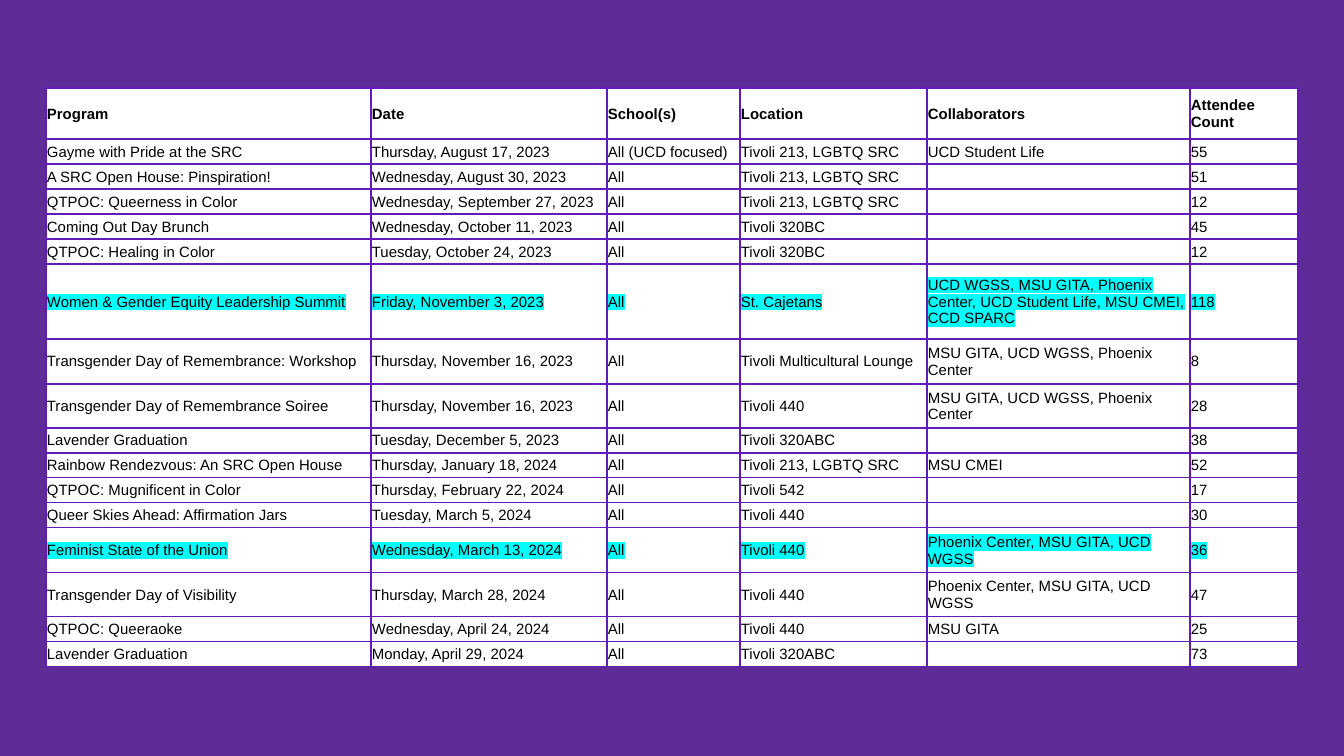
from dataclasses import dataclass

from lxml.etree import SubElement
from pptx import Presentation
from pptx.dml.color import RGBColor
from pptx.enum.text import MSO_ANCHOR
from pptx.oxml.ns import qn
from pptx.util import Emu, Pt

EMU_PER_PX = 914400 / 134.4
PURPLE = RGBColor(0x5E, 0x2B, 0x97)
BORDER = RGBColor(0x61, 0x1B, 0xB8)
WHITE = RGBColor(0xFF, 0xFF, 0xFF)
BLACK = RGBColor(0x00, 0x00, 0x00)
CYAN = RGBColor(0x00, 0xFF, 0xFF)

FONT_SIZE = Pt(8)
CELL_FORMAT = {"margin_left": 1, "margin_top": 1, "margin_right": 1, "margin_bottom": 0}
TABLE_LEFT, TABLE_TOP = 46, 88
COLUMN_WIDTHS = (325, 236, 133, 187, 263, 108)
HEADER_HEIGHT, LINE_HEIGHT = 51, 25


@dataclass
class Row:
    program: str
    date: str
    schools: str
    location: str
    collaborators: str
    attendees: str
    height: int = LINE_HEIGHT
    bold: bool = False
    highlighted: bool = False

    def texts(self) -> tuple[str, ...]:
        return (self.program, self.date, self.schools, self.location,
                self.collaborators, self.attendees)


ROWS = [
    Row("Program", "Date", "School(s)", "Location", "Collaborators", "Attendee Count",
        HEADER_HEIGHT, bold=True),
    Row("Gayme with Pride at the SRC", "Thursday, August 17, 2023", "All (UCD focused)",
        "Tivoli 213, LGBTQ SRC", "UCD Student Life", "55"),
    Row("A SRC Open House: Pinspiration!", "Wednesday, August 30, 2023", "All",
        "Tivoli 213, LGBTQ SRC", "", "51"),
    Row("QTPOC: Queerness in Color", "Wednesday, September 27, 2023", "All",
        "Tivoli 213, LGBTQ SRC", "", "12"),
    Row("Coming Out Day Brunch", "Wednesday, October 11, 2023", "All", "Tivoli 320BC", "", "45"),
    Row("QTPOC: Healing in Color", "Tuesday, October 24, 2023", "All", "Tivoli 320BC", "", "12"),
    Row("Women & Gender Equity Leadership Summit", "Friday, November 3, 2023", "All",
        "St. Cajetans",
        "UCD WGSS, MSU GITA, Phoenix Center, UCD Student Life, MSU CMEI, CCD SPARC", "118",
        75, highlighted=True),
    Row("Transgender Day of Remembrance: Workshop", "Thursday, November 16, 2023", "All",
        "Tivoli Multicultural Lounge", "MSU GITA, UCD WGSS, Phoenix Center", "8", 45),
    Row("Transgender Day of Remembrance Soiree", "Thursday, November 16, 2023", "All",
        "Tivoli 440", "MSU GITA, UCD WGSS, Phoenix Center", "28", 44),
    Row("Lavender Graduation", "Tuesday, December 5, 2023", "All", "Tivoli 320ABC", "", "38"),
    Row("Rainbow Rendezvous: An SRC Open House", "Thursday, January 18, 2024", "All",
        "Tivoli 213, LGBTQ SRC", "MSU CMEI", "52"),
    Row("QTPOC: Mugnificent in Color", "Thursday, February 22, 2024", "All",
        "Tivoli 542", "", "17"),
    Row("Queer Skies Ahead: Affirmation Jars", "Tuesday, March 5, 2024", "All",
        "Tivoli 440", "", "30"),
    Row("Feminist State of the Union", "Wednesday, March 13, 2024", "All", "Tivoli 440",
        "Phoenix Center, MSU GITA, UCD WGSS", "36", 45, highlighted=True),
    Row("Transgender Day of Visibility", "Thursday, March 28, 2024", "All", "Tivoli 440",
        "Phoenix Center, MSU GITA, UCD WGSS", "47", 44),
    Row("QTPOC: Queeraoke", "Wednesday, April 24, 2024", "All", "Tivoli 440", "MSU GITA", "25"),
    Row("Lavender Graduation", "Monday, April 29, 2024", "All", "Tivoli 320ABC", "", "73"),
]


def px(length: int) -> Emu:
    return Emu(round(length * EMU_PER_PX))


def add_borders(cell) -> None:
    tc_pr = cell._tc.get_or_add_tcPr()
    for side in ("a:lnL", "a:lnR", "a:lnT", "a:lnB"):
        ln = SubElement(tc_pr, qn(side), w=str(Pt(1)))
        fill = SubElement(ln, qn("a:solidFill"))
        SubElement(fill, qn("a:srgbClr"), val=str(BORDER))


def highlight(r) -> None:
    """Mark the run; the schema wants the highlight right after the text fill."""
    r_pr = r.font._element
    mark = SubElement(r_pr, qn("a:highlight"))
    SubElement(mark, qn("a:srgbClr"), val=str(CYAN))
    r_pr.find(qn("a:solidFill")).addnext(mark)


def fill_cell(cell, text: str, row: Row) -> None:
    for name, margin in CELL_FORMAT.items():
        setattr(cell, name, px(margin))
    cell.vertical_anchor = MSO_ANCHOR.MIDDLE
    add_borders(cell)
    cell.fill.solid()
    cell.fill.fore_color.rgb = WHITE
    p = cell.text_frame.paragraphs[0]
    if not text:
        # An empty cell needs a small font too, or it stretches its row.
        SubElement(p._p, qn("a:endParaRPr"), sz=str(FONT_SIZE.centipoints))
        return
    r = p.add_run()
    r.text = text
    for name, value in {"name": "Arial", "size": FONT_SIZE, "bold": row.bold}.items():
        setattr(r.font, name, value)
    r.font.color.rgb = BLACK
    if row.highlighted:
        highlight(r)


def add_program_table(s) -> None:
    frame = s.shapes.add_table(
        len(ROWS), len(COLUMN_WIDTHS), px(TABLE_LEFT), px(TABLE_TOP),
        px(sum(COLUMN_WIDTHS)), px(sum(row.height for row in ROWS)))
    table = frame.table
    table.horz_banding = False
    for column, width in zip(table.columns, COLUMN_WIDTHS):
        column.width = px(width)
    for table_row, row in zip(table.rows, ROWS):
        table_row.height = px(row.height)
        for cell, text in zip(table_row.cells, row.texts()):
            fill_cell(cell, text, row)


def main() -> None:
    prs = Presentation()
    prs.slide_width, prs.slide_height = px(1344), px(756)
    s = prs.slides.add_slide(prs.slide_layouts[6])
    s.background.fill.solid()
    s.background.fill.fore_color.rgb = PURPLE
    add_program_table(s)
    prs.save("out.pptx")


if __name__ == "__main__":
    main()
